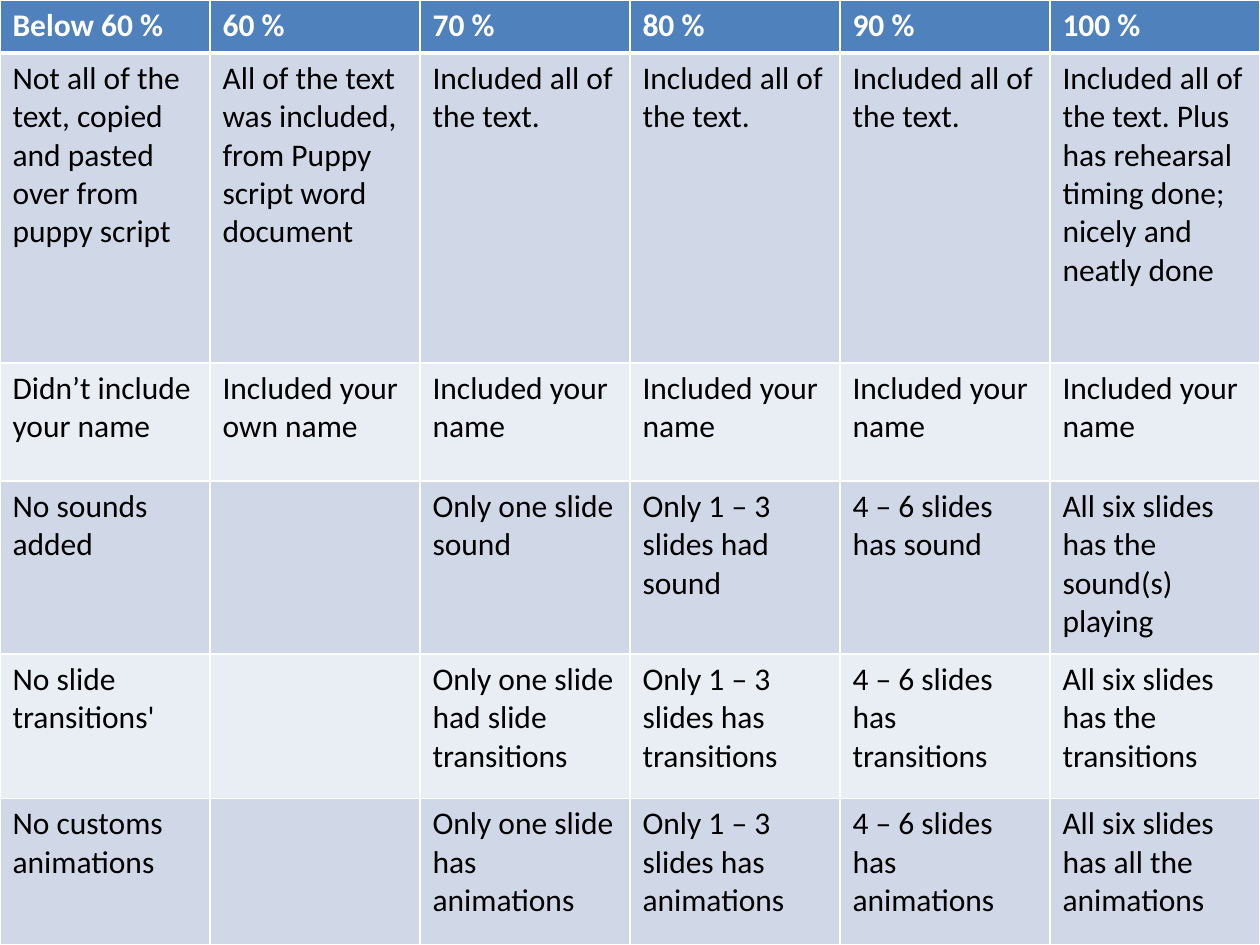
from dataclasses import dataclass

import pptx
import pptx.dml.color
import pptx.oxml
import pptx.oxml.ns
import pptx.util

SLIDE_WIDTH = pptx.util.Inches(10)
SLIDE_HEIGHT = pptx.util.Inches(7.5)
HEADER_FILL = "4F81BD"
BAND_FILLS = ("D0D8E8", "E9EDF4")
WHITE, BLACK = "FFFFFF", "000000"
THIN, THICK = 1, 3  # border widths in points


@dataclass
class RubricRow:
    height: float  # row units; all rows together fill the slide
    texts: tuple[str, ...]


RUBRIC = (
    RubricRow(0.42, ("Below 60 %", "60 %", "70 %", "80 %", "90 %", "100 %")),
    RubricRow(2.46, (
        "Not all of the text, copied and pasted over from puppy script",
        "All of the text was included, from Puppy script word document",
        *["Included all of the text."] * 3,
        "Included all of the text. Plus has rehearsal timing done; nicely and neatly done",
    )),
    RubricRow(0.94, (
        "Didn’t include your name",
        "Included your own name",
        *["Included your name"] * 4,
    )),
    RubricRow(1.37, (
        "No sounds added",
        "",
        "Only one slide sound",
        "Only 1 – 3  slides had sound",
        "4 – 6 slides has sound",
        "All six slides has the sound(s) playing",
    )),
    RubricRow(1.15, (
        "No slide transitions'",
        "",
        "Only one slide had slide transitions",
        "Only 1 – 3  slides has transitions",
        "4 – 6 slides has transitions",
        "All six slides has the transitions",
    )),
    RubricRow(1.16, (
        "No customs animations",
        "",
        "Only one slide has animations",
        "Only 1 – 3  slides has animations",
        "4 – 6 slides has animations",
        "All six slides has all the animations",
    )),
)


def color(value: str) -> pptx.dml.color.RGBColor:
    return pptx.dml.color.RGBColor.from_string(value)


def draw_borders(cell, widths: dict[str, float]) -> None:
    """Add white borders; they must come before the cell's fill."""
    properties = cell._tc.get_or_add_tcPr()
    for side, width in widths.items():
        properties.append(pptx.oxml.parse_xml(
            f'<a:ln{side} {pptx.oxml.ns.nsdecls("a")} w="{pptx.util.Pt(width)}">'
            f'<a:solidFill><a:srgbClr val="{WHITE}"/></a:solidFill></a:ln{side}>'
        ))


def draw_cell(cell, text: str, row_index: int) -> None:
    is_header = row_index == 0
    draw_borders(cell, {
        "L": THIN,
        "R": THIN,
        "T": THICK if row_index == 1 else THIN,
        "B": THICK if is_header else THIN,
    })
    cell.fill.solid()
    fill = HEADER_FILL if is_header else BAND_FILLS[(row_index - 1) % 2]
    cell.fill.fore_color.rgb = color(fill)

    cell.text = text
    font = cell.text_frame.paragraphs[0].font
    values = {"name": "Calibri", "size": pptx.util.Pt(18), "bold": is_header}
    for name, value in values.items():
        setattr(font, name, value)
    font.color.rgb = color(WHITE if is_header else BLACK)


def draw_rubric(slide, rows: tuple[RubricRow, ...]) -> None:
    column_count = len(rows[0].texts)
    table = slide.shapes.add_table(
        len(rows), column_count, 0, 0, SLIDE_WIDTH, SLIDE_HEIGHT
    ).table
    for column in table.columns:
        column.width = SLIDE_WIDTH // column_count
    total_height = sum(row.height for row in rows)
    for row_index, row in enumerate(rows):
        table.rows[row_index].height = int(SLIDE_HEIGHT * row.height / total_height)
        for column_index, text in enumerate(row.texts):
            draw_cell(table.cell(row_index, column_index), text, row_index)


def main() -> None:
    presentation = pptx.Presentation()
    presentation.slide_width = SLIDE_WIDTH
    presentation.slide_height = SLIDE_HEIGHT
    slide = presentation.slides.add_slide(presentation.slide_layouts[6])
    # Grading rubric covering the whole slide
    draw_rubric(slide, RUBRIC)
    presentation.save("out.pptx")


if __name__ == "__main__":
    main()
